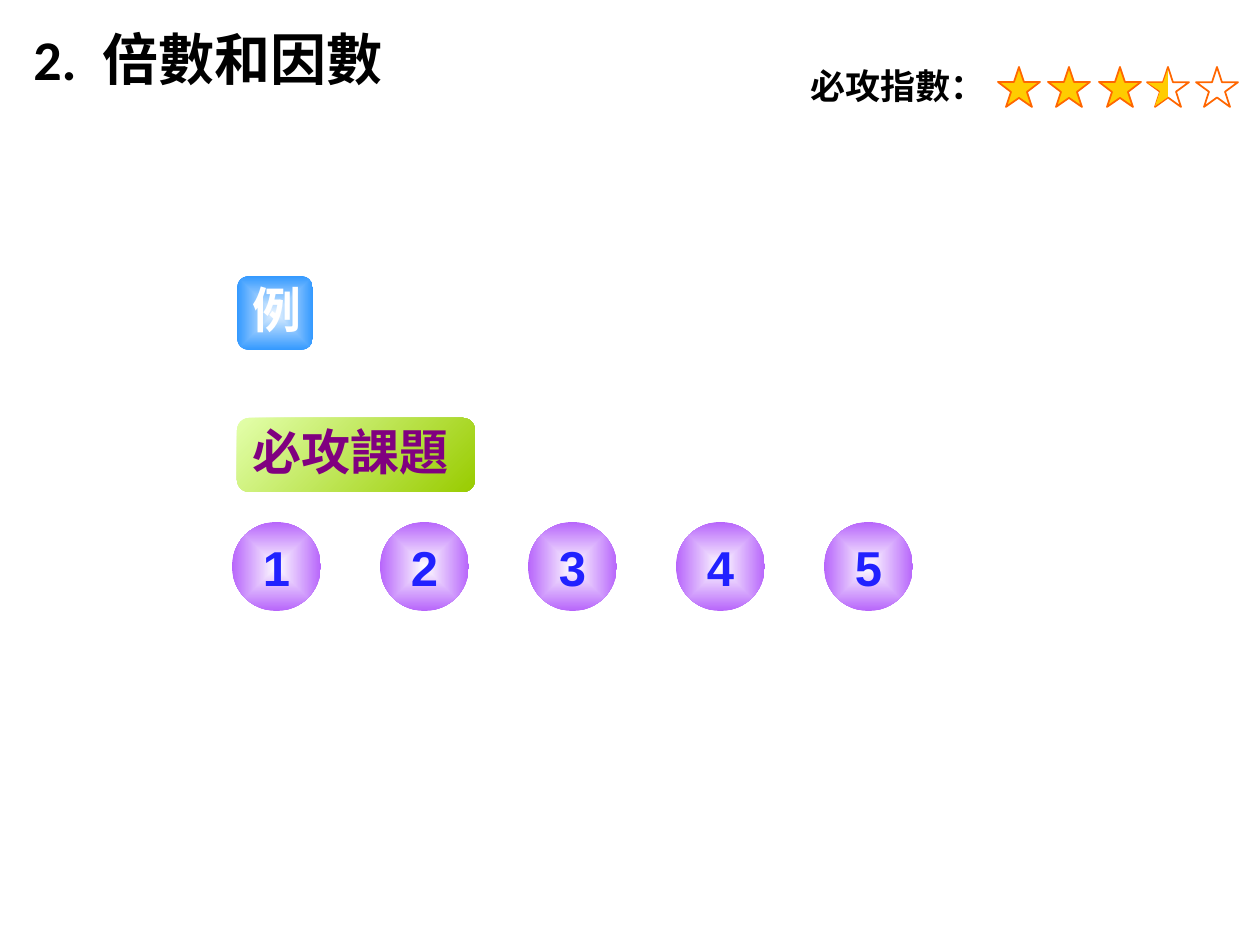
import pptx
import pptx.util
import pptx.dml.color
import pptx.enum.shapes
import pptx.enum.text
import pptx.oxml
import pptx.oxml.ns

SCALE = 914400 / 126
CJK = "Noto Sans CJK SC"
SHAPE = pptx.enum.shapes.MSO_SHAPE
ALIGN = pptx.enum.text.PP_ALIGN
ANCHOR = pptx.enum.text.MSO_ANCHOR
STAR = [(0, 15), (16, 15), (21, 0), (26, 15), (42, 15),
        (29, 25), (34, 40), (21, 31), (8, 40), (13, 25)]
HALF_STAR = [(21, 30), (21, 2), (16, 16), (1, 16), (13, 24), (8, 39)]


def px(length):
    return pptx.util.Emu(round(length * SCALE))


def rgb(value):
    return pptx.dml.color.RGBColor.from_string(value)


def apply(target, formats):
    for name, value in formats.items():
        setattr(target, name, value)


def write(frame, pieces, size, font, color, align=ALIGN.LEFT, spacing=None):
    para = frame.paragraphs[0]
    apply(para, {"alignment": align})
    if spacing:
        para.line_spacing = pptx.util.Pt(spacing)
    for text, tracking in pieces:
        span = para.add_run()
        span.text = text
        apply(span.font, {"size": pptx.util.Pt(size), "name": font, "bold": True})
        span.font.color.rgb = rgb(color)
        properties = span.font._element
        if tracking:
            properties.set("spc", str(tracking))
        east = pptx.oxml.parse_xml(
            f'<a:ea {pptx.oxml.ns.nsdecls("a")} typeface="{CJK}"/>')
        properties.find(pptx.oxml.ns.qn("a:latin")).addnext(east)


def add_text(page, box, pieces, **style):
    label = page.shapes.add_textbox(*map(px, box))
    label.text_frame.word_wrap = True
    write(label.text_frame, pieces, **style)


def paint(shape, fill, line=None):
    shape.shadow.inherit = False
    shape.fill.solid()
    shape.fill.fore_color.rgb = rgb(fill)
    if line:
        shape.line.color.rgb = rgb(line)
        shape.line.width = pptx.util.Pt(1)
    else:
        shape.line.fill.background()


def add_outline(shapes, left, top, points, fill, line=None):
    corners = [(left + x, top + y) for x, y in points]
    builder = shapes.build_freeform(*corners[0], scale=SCALE)
    builder.add_line_segments(corners[1:], close=True)
    paint(builder.convert_to_shape(), fill, line)


def add_preset_star(shapes, left, top):
    star = shapes.add_shape(SHAPE.STAR_5_POINT, px(left), px(top), px(42), px(40))
    paint(star, "FFFFFF", "FF6600")


def add_rating(page, left, top):
    add_text(page, (left, top, 251, 59), [("必攻指數：", None)],
             size=20, font="Arial", color="000000", spacing=21.6)
    star_top = top + 5
    add_preset_star(page.shapes, left + 398, star_top)
    for offset in (200, 250, 301):
        add_outline(page.shapes, left + offset, star_top, STAR, "FFCC00", "FF6600")
    group = page.shapes.add_group_shape()
    add_preset_star(group.shapes, left + 349, star_top)
    add_outline(group.shapes, left + 349, star_top, HALF_STAR, "FFCC00")


def add_button(page, kind, box, text, colors, radial, frame_formats, **style):
    button = page.shapes.add_shape(kind, *map(px, box))
    button.shadow.inherit = False
    button.line.fill.background()
    button.fill.gradient()
    for stop, color, position in zip(button.fill.gradient_stops, colors, (0, 1)):
        stop.color.rgb = rgb(color)
        stop.position = position
    button.fill.gradient_angle = 315
    if radial:
        linear = button._element.spPr.find(
            ".//" + pptx.oxml.ns.qn("a:lin"))
        center = pptx.oxml.parse_xml(
            f'<a:path {pptx.oxml.ns.nsdecls("a")} path="shape">'
            '<a:fillToRect l="50000" t="50000" r="50000" b="50000"/></a:path>')
        linear.getparent().replace(linear, center)
    apply(button.text_frame, frame_formats)
    write(button.text_frame, [(text, None)], size=28, **style)


def add_menu(page, left, top):
    top_wrapped = {"vertical_anchor": ANCHOR.TOP, "word_wrap": True}
    middle = {"vertical_anchor": ANCHOR.MIDDLE, "word_wrap": False}
    add_button(page, SHAPE.ROUNDED_RECTANGLE, (left + 5, top + 142, 238, 74),
               "必攻課題", ("E3FFAB", "99CC00"), False, top_wrapped,
               font=CJK, color="800080", spacing=30)
    add_button(page, SHAPE.ROUNDED_RECTANGLE, (left + 5, top, 76, 74),
               "例", ("E5F2FF", "3399FF"), True, top_wrapped,
               font=CJK, color="FFFFFF", align=ALIGN.CENTER, spacing=30)
    for index in range(5):
        add_button(page, SHAPE.OVAL, (left + 148 * index, top + 246, 89, 89),
                   str(index + 1), ("FFFFFF", "B765FB"), True, middle,
                   font="Arial", color="2121FF", align=ALIGN.CENTER)


def main():
    deck = pptx.Presentation()
    apply(deck, {"slide_width": px(1260), "slide_height": px(945)})
    page = deck.slides.add_slide(deck.slide_layouts[6])
    add_text(page, (21, 18, 559, 103),
             [("2.", None), (" ", 720), ("倍數和因數", None)],
             size=32, font="Calibri", color="000000")
    add_rating(page, 798, 62)
    add_menu(page, 232, 276)
    deck.save("out.pptx")


if __name__ == "__main__":
    main()
